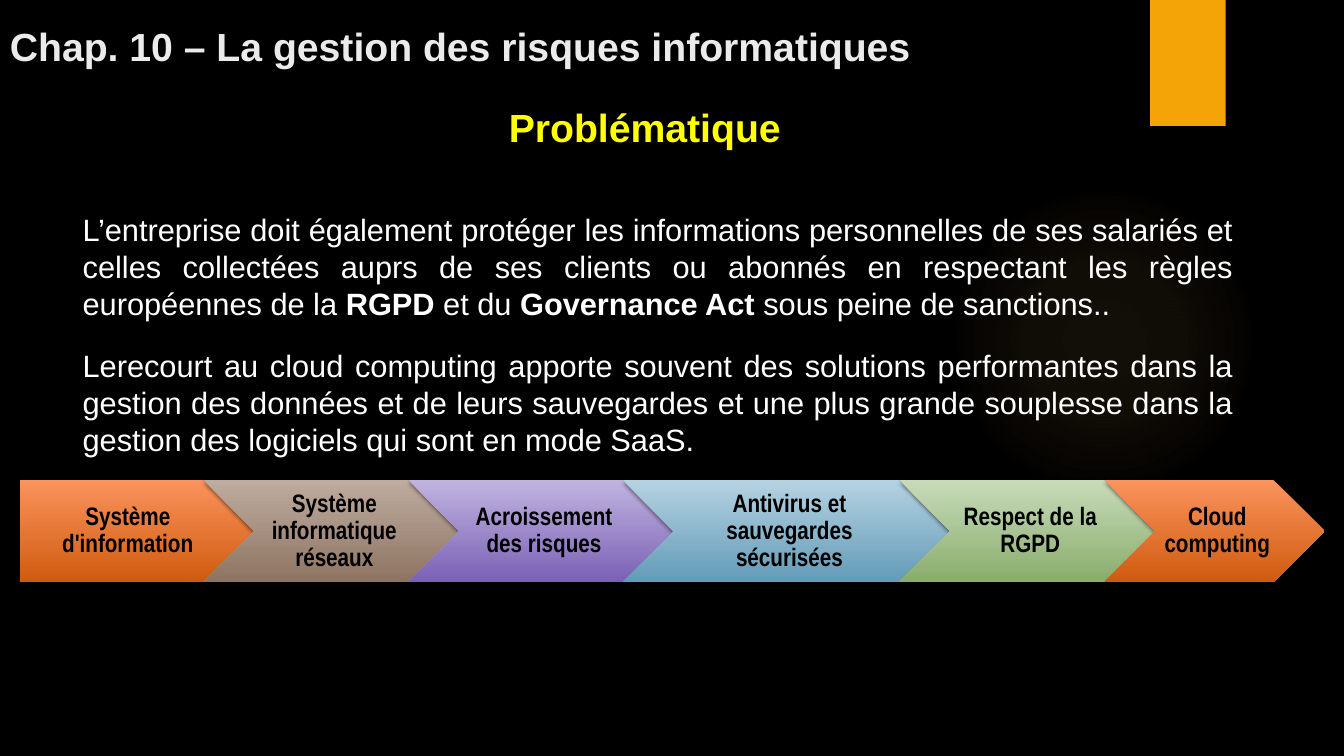
from pptx import Presentation, util as u
from pptx.dml.color import RGBColor
from pptx.enum import shapes, text
from pptx.oxml import parse_xml
from pptx.oxml.ns import nsdecls, qn

Pt = u.Pt
SHAPE = shapes.MSO_SHAPE
ALIGN = text.PP_ALIGN
ANCHOR = text.MSO_ANCHOR


def rgb(value):
    return RGBColor.from_string(value)


class Deck:
    """Style and current slide; all lengths are in points."""
    font, narrow = "Arial", "Arial Narrow"
    black, white, title, yellow, amber = "000000", "FFFFFF", "EBEBEB", "FFFF00", "F5A408"

    def __init__(self, width, height):
        self.prs = Presentation()
        self.prs.slide_width, self.prs.slide_height = Pt(width), Pt(height)
        self.s = self.prs.slides.add_slide(self.prs.slide_layouts[6])
        fill = self.s.background.fill
        fill.solid()
        fill.fore_color.rgb = rgb(self.black)

    def shape(self, kind, x, y, w, h, color):
        sp = self.s.shapes.add_shape(kind, Pt(x), Pt(y), Pt(w), Pt(h))
        sp.shadow.inherit = False
        sp.line.fill.background()
        sp.fill.solid()
        sp.fill.fore_color.rgb = rgb(color)
        return sp

    def drop_shadow(self, sp):
        effects = sp._element.spPr.find(qn("a:effectLst"))
        effects.append(parse_xml(
            f'<a:outerShdw {nsdecls("a")} blurRad="{Pt(3)}" dist="{Pt(2)}" dir="5400000" rotWithShape="0">'
            f'<a:srgbClr val="{self.black}"><a:alpha val="45000"/></a:srgbClr></a:outerShdw>'))

    def glow(self, x, y, size, color, stops):
        """Circle fading outwards; stops are (position, opacity) in percent."""
        sp = self.shape(SHAPE.OVAL, x, y, size, size, color)
        gs = "".join(f'<a:gs pos="{pos * 1000}"><a:srgbClr val="{color}">'
                     f'<a:alpha val="{alpha * 1000}"/></a:srgbClr></a:gs>' for pos, alpha in stops)
        spPr = sp._element.spPr
        spPr.replace(spPr.find(qn("a:solidFill")), parse_xml(
            f'<a:gradFill {nsdecls("a")}><a:gsLst>{gs}</a:gsLst><a:path path="circle">'
            '<a:fillToRect l="50000" t="50000" r="50000" b="50000"/></a:path></a:gradFill>'))

    def format(self, p, size, color, font, align):
        p.alignment = align
        for r in p.runs:
            r.font.size, r.font.name = Pt(size), font
            r.font.color.rgb = rgb(color)

    def text(self, x, y, w, h, paragraphs, size, color, align=ALIGN.LEFT,
             anchor=ANCHOR.TOP, wrap=True, gap=0):
        """Each paragraph is a list of (words, bold) runs."""
        tf = self.s.shapes.add_textbox(Pt(x), Pt(y), Pt(w), Pt(h)).text_frame
        tf.word_wrap, tf.vertical_anchor = wrap, anchor
        for i, runs in enumerate(paragraphs):
            p = tf.add_paragraph() if i else tf.paragraphs[0]
            if i:
                p.space_before = Pt(gap)
            for words, bold in runs:
                r = p.add_run()
                r.text, r.font.bold = words, bold
            self.format(p, size, color, self.font, align)

    def step(self, kind, x, y, w, h, label, colors, inset):
        sp = self.shape(kind, x, y, w, h, colors[0])
        sp.fill.gradient()
        sp.fill.gradient_angle = 270
        for stop, color in zip(sp.fill.gradient_stops, colors):
            stop.color.rgb = rgb(color)
        self.drop_shadow(sp)
        tf = sp.text_frame
        tf.text = label
        tf.word_wrap, tf.vertical_anchor = True, ANCHOR.MIDDLE
        tf.margin_left, tf.margin_right = Pt(inset), Pt(2)
        tf.margin_top = tf.margin_bottom = Pt(4)
        p = tf.paragraphs[0]
        p.line_spacing = 0.9
        self.format(p, 18, self.black, self.narrow, ALIGN.CENTER)
        p.runs[0].font.bold = True

    def process(self, x, y, h, steps):
        """Row of arrows, each one starting at the shoulder of the one before."""
        for i, (label, w, colors) in enumerate(steps):
            kind, inset = (SHAPE.CHEVRON, 6) if i else (SHAPE.PENTAGON, 7)
            self.step(kind, x, y, w, h, label, colors, inset)
            x += w - h / 2


def main():
    d = Deck(960, 540)
    d.glow(677.5, 131.8, 221.8, "FAC96A", [(0, 7), (36, 6), (69, 0)])
    d.drop_shadow(d.shape(SHAPE.RECTANGLE, 821.5, 0, 54, 90, d.amber))

    d.text(0, 8, 892, 45.4, [[("Chap. 10 – La gestion des risques informatiques", True)]],
           28, d.title, anchor=ANCHOR.BOTTOM)
    d.text(356.4, 70.5, 211, 41, [[("Problématique", True)]],
           28, d.yellow, ALIGN.JUSTIFY, wrap=False)
    d.text(52, 147, 836, 185, [
        [("L’entreprise doit également protéger les informations personnelles de ses salariés "
          "et celles collectées auprs de ses clients ou abonnés en respectant les règles "
          "européennes de la ", False),
         ("RGPD", True), (" et du ", False), ("Governance Act ", True),
         ("sous peine de sanctions..", False)],
        [("Lerecourt au cloud computing apporte souvent des solutions performantes dans la "
          "gestion des données et de leurs sauvegardes et une plus grande souplesse dans la "
          "gestion des logiciels qui sont en mode SaaS.", False)],
    ], 22, d.white, ALIGN.JUSTIFY, gap=18)

    orange = ("FB935D", "CF5B0F")
    d.process(14, 343, 72.8, [
        ("Système d'information", 167.8, orange),
        ("Système informatique réseaux", 182.9, ("BEAC9F", "8E7463")),
        ("Acroissement des risques", 189.4, ("C0B3DF", "7B61B6")),
        ("Antivirus et sauvegardes sécurisées", 234, ("B5D2E1", "639BB8")),
        ("Respect de la RGPD", 182.9, ("C8DBB9", "89AD6C")),
        ("Cloud computing", 157, orange),
    ])
    d.prs.save("out.pptx")


if __name__ == "__main__":
    main()
